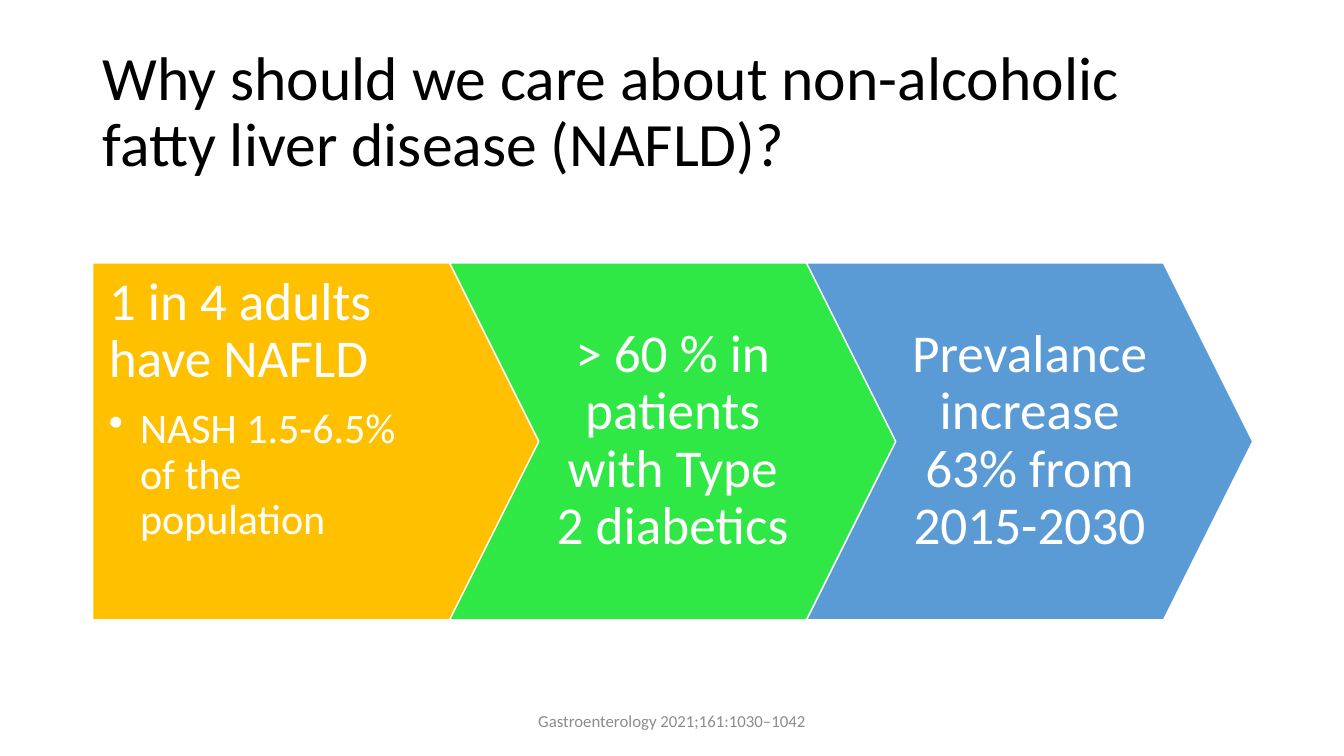
import pptx
import pptx.util
import pptx.dml.color
import pptx.enum.shapes
import pptx.enum.text
from lxml import etree

Inches, Pt = pptx.util.Inches, pptx.util.Pt
SHAPE = pptx.enum.shapes.MSO_SHAPE
ALIGN = pptx.enum.text.PP_ALIGN
ANCHOR = pptx.enum.text.MSO_ANCHOR
WIDTH, HEIGHT = 13.33, 7.5


def color(target, value):
    target.rgb = pptx.dml.color.RGBColor.from_string(value)


def add_text(area, lines, fill, align, anchor, insets=(0.1, 0.05, 0.1, 0.05), spacing=0.9):
    """Add a text box; each line is (text, size, space after)."""
    box = page.shapes.add_textbox(*[Inches(length) for length in area])
    frame = box.text_frame
    frame.word_wrap = True
    frame.vertical_anchor = anchor
    frame.margin_left, frame.margin_top, frame.margin_right, frame.margin_bottom = [
        Inches(inset) for inset in insets]
    frame.text = "\n".join(text for text, size, after in lines)
    for para, (text, size, after) in zip(frame.paragraphs, lines):
        para.alignment = align
        para.line_spacing = spacing
        para.space_after = Pt(after)
        for span in para.runs:
            span.font.name = "Calibri"
            span.font.size = Pt(size)
            color(span.font.color, fill)
    return frame


deck = pptx.Presentation()
deck.slide_width, deck.slide_height = Inches(WIDTH), Inches(HEIGHT)
page = deck.slides.add_slide(deck.slide_layouts[6])

# Title
margin = 0.92
add_text((margin, 0.4, 11.5, 1.45),
         [("Why should we care about non-alcoholic fatty liver disease (NAFLD)?", 44, 0)],
         "000000", ALIGN.LEFT, ANCHOR.MIDDLE)

# Arrow band: each arrow is one step high and its point reaches a quarter step further
step, top, point = 3.54, 2.61, 0.25
arrows = [
    (SHAPE.PENTAGON, "FFC000", [("1 in 4 adults have NAFLD", 38, 13.3),
                                ("NASH 1.5-6.5% of the population", 30, 4.5)]),
    (SHAPE.CHEVRON, "30E845", [("> 60 % in patients with Type 2 diabetics", 38, 13.3)]),
    (SHAPE.CHEVRON, "5B9BD5", [("Prevalance increase 63% from 2015-2030", 38, 13.3)]),
]
for column, (kind, fill, lines) in enumerate(arrows):
    left = margin + column * step
    arrow = page.shapes.add_shape(kind, Inches(left), Inches(top),
                                  Inches(step * (1 + point)), Inches(step))
    arrow.adjustments[0] = point
    arrow.shadow.inherit = False
    arrow.fill.solid()
    color(arrow.fill.fore_color, fill)
    color(arrow.line.color, "FFFFFF")
    arrow.line.width = Pt(1)

    if kind == SHAPE.PENTAGON:
        frame = add_text((left, top, step * (1 + point / 2), step), lines, "FFFFFF",
                         ALIGN.LEFT, ANCHOR.TOP, (0.16, 0.11, 0.62, 0.11))
        # Bullet with a hanging indent
        props = frame.paragraphs[1]._p.get_or_add_pPr()
        props.set("lvl", "1")
        props.set("marL", str(Inches(0.31)))
        props.set("indent", str(-Inches(0.31)))
        bullet = etree.SubElement(props, pptx.oxml.ns.qn("a:buChar"))
        bullet.set("char", "•")
    else:
        add_text((left + step * point, top, step * (1 - point), step), lines, "FFFFFF",
                 ALIGN.CENTER, ANCHOR.MIDDLE, (0.16, 0.11, 0.16, 0.11))

# Source line
add_text(((WIDTH - 4.5) / 2, 6.95, 4.5, 0.4),
         [("Gastroenterology 2021;161:1030–1042", 12, 0)],
         "8C8C8C", ALIGN.CENTER, ANCHOR.MIDDLE, spacing=1.0)

deck.save("out.pptx")
